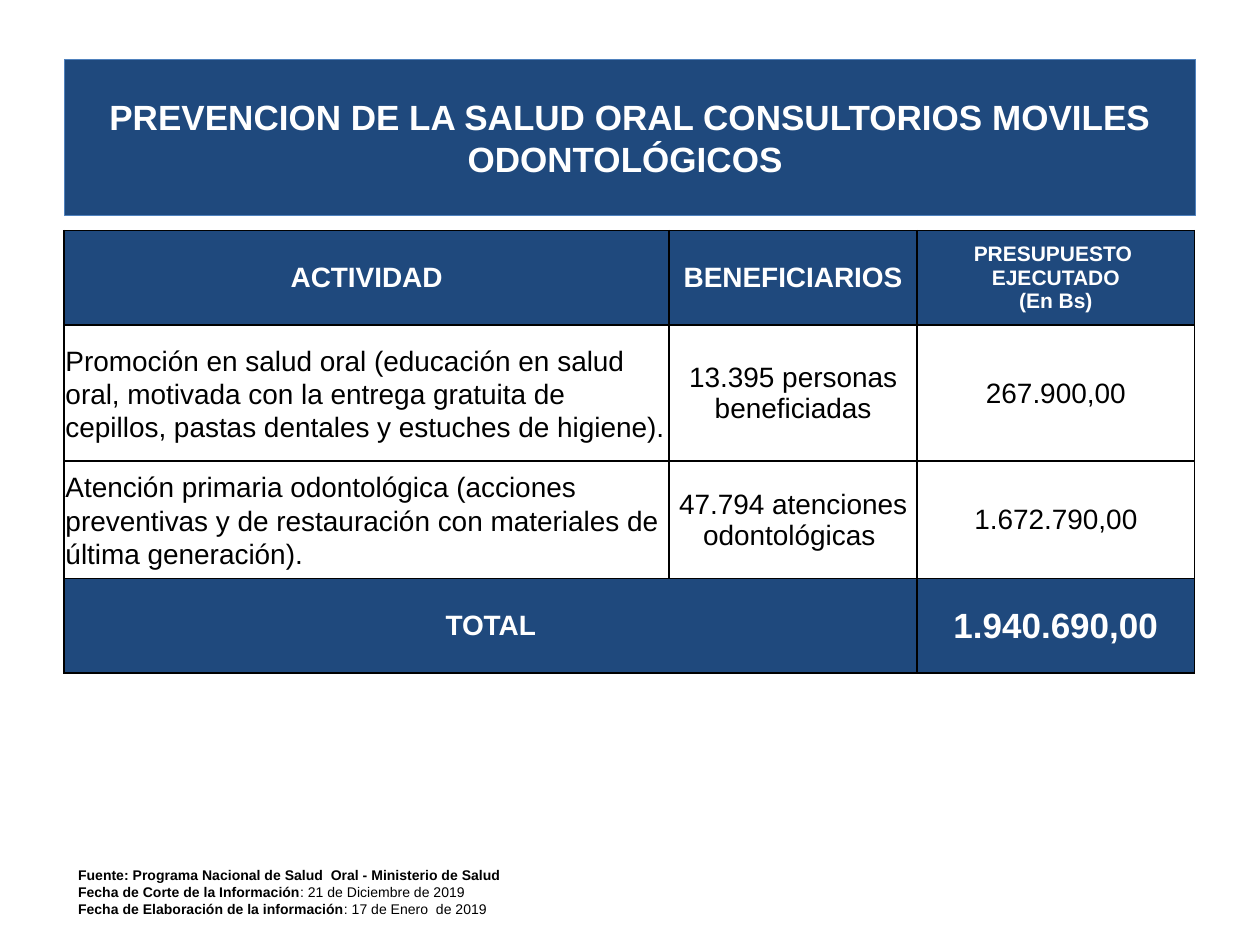
from lxml import etree
from pptx import Presentation
from pptx.dml.color import RGBColor
from pptx.enum.text import MSO_ANCHOR, MSO_AUTO_SIZE, PP_ALIGN
from pptx.oxml.ns import qn
from pptx.util import Inches, Pt

NAVY = RGBColor(0x1F, 0x49, 0x7D)
BLUE = RGBColor(0x4F, 0x81, 0xBD)
WHITE = RGBColor(0xFF, 0xFF, 0xFF)
BLACK = RGBColor(0x00, 0x00, 0x00)
FONT = "Arial"

LEFT, WIDTH = Inches(0.51), Inches(8.98)
COLUMN_WIDTHS = (4.8, 1.97, 2.2)
ROW_HEIGHTS = (0.75, 1.08, 0.93, 0.75)
HEADER_MARGINS = (0.1, 0.05, 0.1, 0.05)
BODY_MARGINS = (0.01, 0.01, 0.01, 0)

HEADERS = (("ACTIVIDAD", 16), ("BENEFICIARIOS", 16),
           ("PRESUPUESTO \nEJECUTADO\n(En Bs)", 12))
ACTIVITIES = (
    ("Promoción en salud oral (educación en salud oral, motivada con la entrega "
     "gratuita de cepillos, pastas dentales y estuches de higiene).",
     "13.395 personas beneficiadas", "267.900,00"),
    ("Atención primaria odontológica (acciones preventivas y de restauración con "
     "materiales de última generación).",
     "47.794 atenciones odontológicas ", "1.672.790,00"),
)
SOURCE_LINES = (
    ("Fuente: Programa Nacional de Salud  Oral - Ministerio de Salud", ""),
    ("Fecha de Corte de la Información", ": 21 de Diciembre de 2019"),
    ("Fecha de Elaboración de la información", ": 17 de Enero  de 2019"),
)


def add_run(paragraph, text, size=16, color=BLACK, bold=False):
    run = paragraph.add_run()
    run.text = text
    run.font.name = FONT
    run.font.size = Pt(size)
    run.font.bold = bold
    run.font.color.rgb = color


def write_text(frame, text, align=PP_ALIGN.CENTER, line_spacing=None,
               space_after=None, **run_format):
    """Write one paragraph for each line of the text."""
    for index, line in enumerate(text.split("\n")):
        paragraph = frame.add_paragraph() if index else frame.paragraphs[0]
        paragraph.alignment = align
        paragraph.line_spacing = line_spacing
        paragraph.space_after = space_after
        add_run(paragraph, line, **run_format)


def set_margins(target, margins):
    (target.margin_left, target.margin_top,
     target.margin_right, target.margin_bottom) = map(Inches, margins)


def set_borders(cell, color=BLACK, width=1):
    properties = cell._tc.get_or_add_tcPr()
    for index, side in enumerate(("a:lnL", "a:lnR", "a:lnT", "a:lnB")):
        line = etree.Element(qn(side), w=str(Pt(width)))
        fill = etree.SubElement(line, qn("a:solidFill"))
        etree.SubElement(fill, qn("a:srgbClr"), val=str(color))
        properties.insert(index, line)


def format_cell(cell, text, fill=WHITE, margins=BODY_MARGINS, **text_format):
    cell.fill.solid()
    cell.fill.fore_color.rgb = fill
    cell.vertical_anchor = MSO_ANCHOR.MIDDLE
    set_margins(cell, margins)
    if text:
        write_text(cell.text_frame, text, **text_format)
    set_borders(cell)


def add_title(slide, left, top, width, height):
    title = slide.shapes.title
    title.left, title.top, title.width, title.height = left, top, width, height
    title.fill.solid()
    title.fill.fore_color.rgb = NAVY
    title.line.color.rgb = BLUE
    title.line.width = Pt(0.75)
    frame = title.text_frame
    frame.auto_size = MSO_AUTO_SIZE.NONE
    frame.vertical_anchor = MSO_ANCHOR.MIDDLE
    write_text(frame, "PREVENCION DE LA SALUD ORAL CONSULTORIOS MOVILES ODONTOLÓGICOS ",
               size=20, color=WHITE, bold=True)


def add_budget_table(slide, left, top, width, height):
    table = slide.shapes.add_table(len(ROW_HEIGHTS), len(COLUMN_WIDTHS),
                                   left, top, width, height).table
    for column, column_width in zip(table.columns, COLUMN_WIDTHS):
        column.width = Inches(column_width)
    for row, row_height in zip(table.rows, ROW_HEIGHTS):
        row.height = Inches(row_height)

    # Header row
    for column, (text, size) in enumerate(HEADERS):
        format_cell(table.cell(0, column), text, fill=NAVY, margins=HEADER_MARGINS,
                    size=size, color=WHITE, bold=True)

    # Activity rows
    for row, (activity, beneficiaries, budget) in enumerate(ACTIVITIES, start=1):
        format_cell(table.cell(row, 0), activity, align=PP_ALIGN.LEFT,
                    line_spacing=1.07, space_after=Pt(8))
        format_cell(table.cell(row, 1), beneficiaries)
        format_cell(table.cell(row, 2), budget)

    # Total row
    total_row = len(ROW_HEIGHTS) - 1
    table.cell(total_row, 0).merge(table.cell(total_row, 1))
    for column, (text, size) in enumerate((("TOTAL", 16), ("", 16), ("1.940.690,00", 20))):
        format_cell(table.cell(total_row, column), text, fill=NAVY,
                    size=size, color=WHITE, bold=True)


def add_source_note(slide, left, top, width, height):
    frame = slide.shapes.add_textbox(left, top, width, height).text_frame
    frame.word_wrap = True
    set_margins(frame, (0.11, 0.06, 0.11, 0.06))
    for index, (label, detail) in enumerate(SOURCE_LINES):
        paragraph = frame.add_paragraph() if index else frame.paragraphs[0]
        add_run(paragraph, label, size=8, bold=True)
        if detail:
            add_run(paragraph, detail, size=8)


def main():
    presentation = Presentation()
    presentation.slide_width = Inches(10)
    presentation.slide_height = Inches(7.5)
    title_only = presentation.slide_layouts[5]
    slide = presentation.slides.add_slide(title_only)
    add_title(slide, LEFT, Inches(0.47), WIDTH, Inches(1.24))
    add_budget_table(slide, LEFT, Inches(1.83), WIDTH, Inches(sum(ROW_HEIGHTS)))
    add_source_note(slide, LEFT, Inches(6.82), Inches(7.49), Inches(0.52))
    presentation.save("out.pptx")


if __name__ == "__main__":
    main()
